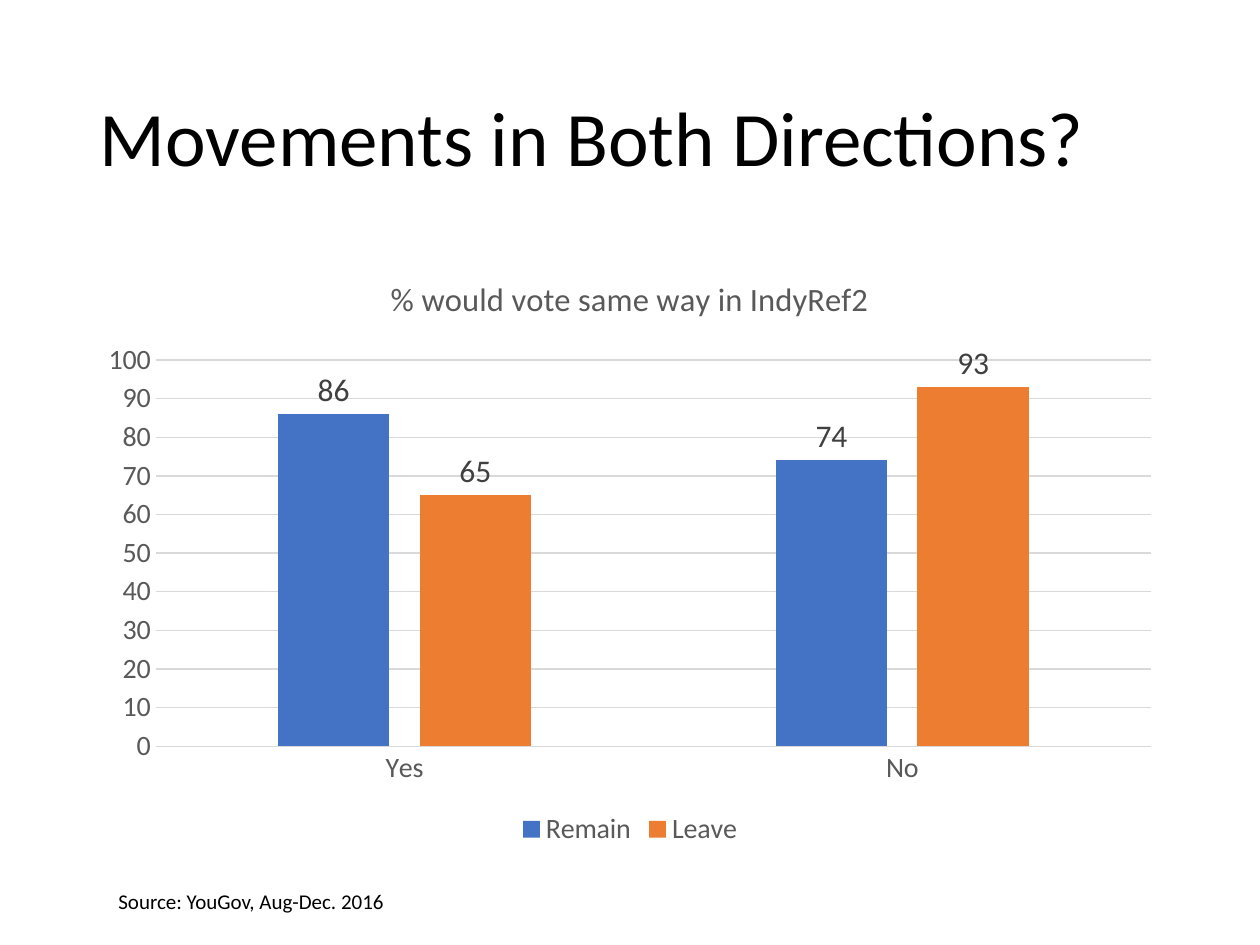
import pptx
import pptx.chart.data
import pptx.dml.color
import pptx.enum.chart
import pptx.enum.text
import pptx.util

RGBColor = pptx.dml.color.RGBColor
BLACK = RGBColor(0x00, 0x00, 0x00)
DARK = RGBColor(0x40, 0x40, 0x40)
GREY = RGBColor(0x59, 0x59, 0x59)
RULE = RGBColor(0xD9, 0xD9, 0xD9)
BLUE = RGBColor(0x44, 0x72, 0xC4)
ORANGE = RGBColor(0xED, 0x7D, 0x31)


def px(n):
    return pptx.util.Emu(round(n * 914400 / 126))


def style(font, size, color):
    font.name = "Calibri"
    font.size = pptx.util.Pt(size)
    font.bold = False
    font.color.rgb = color


prs = pptx.Presentation()
prs.slide_width, prs.slide_height = px(1260), px(945)
s = prs.slides.add_slide(prs.slide_layouts[5])

# Title
title = s.shapes.title
title.left, title.top, title.width, title.height = px(87), px(50), px(1086), px(183)
tf = title.text_frame
tf.vertical_anchor = pptx.enum.text.MSO_ANCHOR.MIDDLE
tf.auto_size = pptx.enum.text.MSO_AUTO_SIZE.NONE
p = tf.paragraphs[0]
p.alignment = pptx.enum.text.PP_ALIGN.LEFT
p.line_spacing = 0.9
r = p.add_run()
r.text = "Movements in Both Directions?"
style(r.font, 44, BLACK)

# Chart
data = pptx.chart.data.CategoryChartData()
data.categories = ["Yes", "No"]
data.add_series("Remain", (86, 74))
data.add_series("Leave", (65, 93))
chart = s.shapes.add_chart(
    pptx.enum.chart.XL_CHART_TYPE.COLUMN_CLUSTERED,
    px(87), px(252), px(1086), px(600), data).chart
style(chart.font, 10, BLACK)

chart.has_title = True
chart.chart_title.include_in_layout = False
r = chart.chart_title.text_frame.paragraphs[0].add_run()
r.text = "% would vote same way in IndyRef2"
style(r.font, 18.6, GREY)

chart.has_legend = True
chart.legend.position = pptx.enum.chart.XL_LEGEND_POSITION.BOTTOM
chart.legend.include_in_layout = False
style(chart.legend.font, 16, GREY)

for axis in (chart.category_axis, chart.value_axis):
    axis.major_tick_mark = pptx.enum.chart.XL_TICK_MARK.NONE
    axis.minor_tick_mark = pptx.enum.chart.XL_TICK_MARK.NONE
    style(axis.tick_labels.font, 16, GREY)
chart.value_axis.minimum_scale = 0
chart.value_axis.maximum_scale = 100
chart.value_axis.major_unit = 10
chart.value_axis.has_major_gridlines = True
chart.value_axis.format.line.fill.background()
for line in (chart.category_axis.format.line,
             chart.value_axis.major_gridlines.format.line):
    line.color.rgb = RULE
    line.width = pptx.util.Pt(0.75)

plot = chart.plots[0]
plot.gap_width = 219
plot.overlap = -27
plot.vary_by_categories = False
for series, color in zip(plot.series, (BLUE, ORANGE)):
    series.invert_if_negative = False
    series.format.fill.solid()
    series.format.fill.fore_color.rgb = color
    labels = series.data_labels
    labels.show_value = True
    labels.position = pptx.enum.chart.XL_LABEL_POSITION.OUTSIDE_END
    style(labels.font, 18, DARK)

# Source line
source = s.shapes.add_textbox(px(106), px(882), px(830), px(38))
tf = source.text_frame
tf.word_wrap = True
tf.auto_size = pptx.enum.text.MSO_AUTO_SIZE.SHAPE_TO_FIT_TEXT
r = tf.paragraphs[0].add_run()
r.text = "Source: YouGov, Aug-Dec. 2016"
style(r.font, 12, BLACK)

prs.save("out.pptx")
